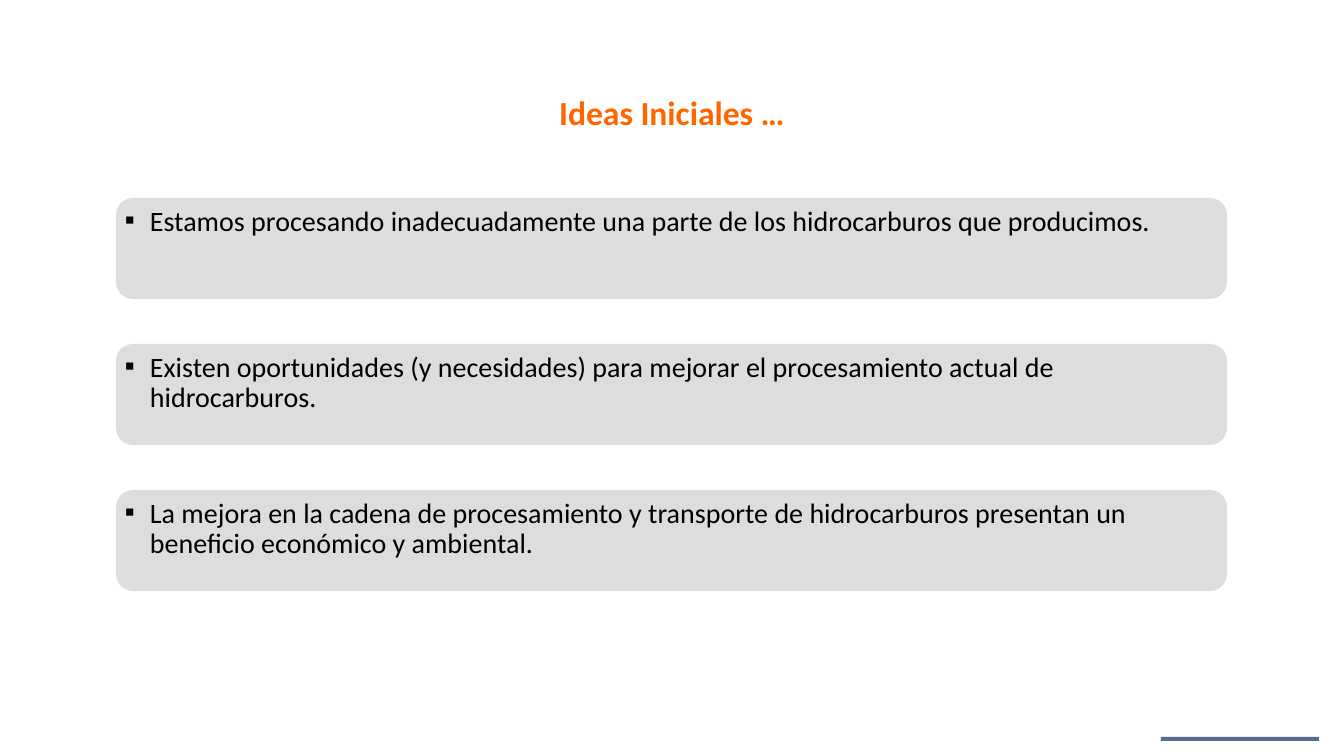
from dataclasses import dataclass

from lxml.etree import SubElement
from pptx import Presentation
from pptx.dml.color import RGBColor
from pptx.enum.shapes import MSO_SHAPE
from pptx.enum.text import MSO_ANCHOR, PP_ALIGN
from pptx.oxml.ns import qn
from pptx.util import Emu, Pt

EMU_PER_PX = 914400 / 100.8
TITLE_ONLY_LAYOUT = 5

IDEAS = [
    "Estamos procesando inadecuadamente una parte de los hidrocarburos que producimos.",
    "Existen oportunidades (y necesidades) para mejorar el procesamiento actual de hidrocarburos.",
    "La mejora en la cadena de procesamiento y transporte de hidrocarburos "
    "presentan un beneficio económico y ambiental.",
]


@dataclass(frozen=True)
class Theme:
    font: str = "Calibri"
    title_size: int = 24
    idea_size: int = 20
    line_spacing: float = 0.9
    title_color: str = "FF6600"
    text_color: str = "000000"
    card_color: str = "DDDDDD"
    bar_color: str = "001C50"
    bar_opacity: int = 65


def px(length):
    return Emu(round(length * EMU_PER_PX))


def set_attributes(target, values):
    for name, value in values.items():
        setattr(target, name, value)


class SlideBuilder:
    def __init__(self, deck, theme):
        self.theme = theme
        self.page = deck.slides.add_slide(deck.slide_layouts[TITLE_ONLY_LAYOUT])

    def put_text(self, box, text, size, color, alignment, margins, bold=False):
        """Fill a box with one paragraph and return that paragraph."""
        left, top = margins
        frame = box.text_frame
        set_attributes(frame, {
            "word_wrap": True, "vertical_anchor": MSO_ANCHOR.TOP,
            "margin_left": px(left), "margin_right": px(left),
            "margin_top": px(top), "margin_bottom": px(top),
        })
        para = frame.paragraphs[0]
        set_attributes(para, {
            "alignment": alignment, "space_before": Pt(0),
            "line_spacing": self.theme.line_spacing,
        })
        span = para.add_run()
        span.text = text
        set_attributes(span.font, {"name": self.theme.font, "size": Pt(size), "bold": bold})
        span.font.color.rgb = RGBColor.from_string(color)
        return para

    def title(self, text, left, top, width, height):
        box = self.page.shapes.title
        set_attributes(box, {
            "left": px(left), "top": px(top), "width": px(width), "height": px(height),
        })
        self.put_text(box, text, self.theme.title_size, self.theme.title_color,
                      PP_ALIGN.CENTER, margins=(8, 4), bold=True)

    def panel(self, kind, color, left, top, width, height):
        box = self.page.shapes.add_shape(kind, px(left), px(top), px(width), px(height))
        box.shadow.inherit = False
        box.fill.solid()
        box.fill.fore_color.rgb = RGBColor.from_string(color)
        box.line.fill.background()
        return box

    def bar(self, left, top, width, height):
        box = self.panel(MSO_SHAPE.RECTANGLE, self.theme.bar_color, left, top, width, height)
        color = box._element.spPr.find(qn("a:solidFill"))[0]
        SubElement(color, qn("a:alpha"), val=str(self.theme.bar_opacity * 1000))

    def idea_card(self, text, left, top, width, height):
        box = self.panel(MSO_SHAPE.ROUNDED_RECTANGLE, self.theme.card_color,
                         left, top, width, height)
        para = self.put_text(box, text, self.theme.idea_size, self.theme.text_color,
                             PP_ALIGN.LEFT, margins=(4, 4))
        self.bullet(para, indent=25)

    def bullet(self, para, indent):
        properties = para._p.get_or_add_pPr()
        properties.set("marL", str(px(indent)))
        properties.set("indent", str(-px(indent)))
        SubElement(properties, qn("a:buFont"), typeface=self.theme.font)
        SubElement(properties, qn("a:buChar"), char="▪")


def main():
    deck = Presentation()
    set_attributes(deck, {"slide_width": px(1344), "slide_height": px(756)})
    builder = SlideBuilder(deck, Theme())
    builder.bar(1161, 737, 158, 4)
    builder.title("Ideas Iniciales …", 77, 92, 1190, 80)
    first_top, pitch = 198, 146
    for row, idea in enumerate(IDEAS):
        builder.idea_card(idea, 116, first_top + row * pitch, 1111, 101)
    deck.save("out.pptx")


if __name__ == "__main__":
    main()
